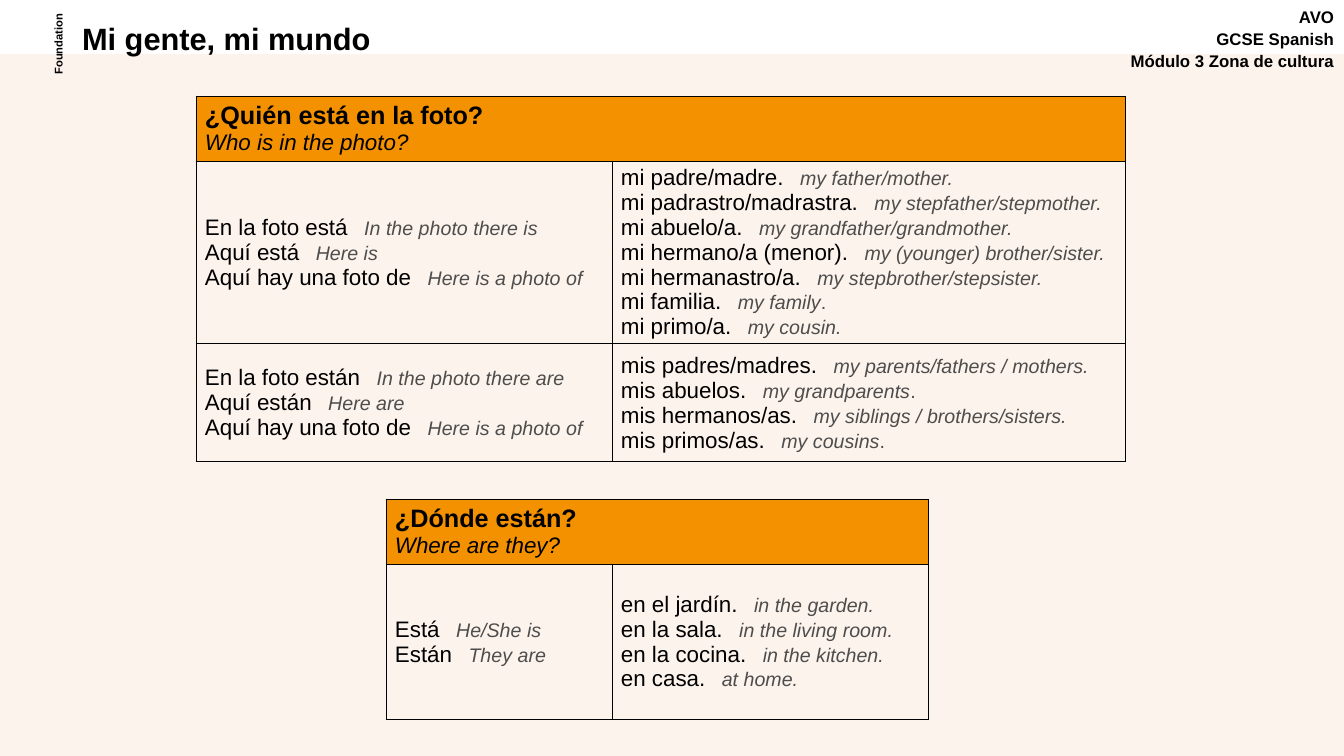
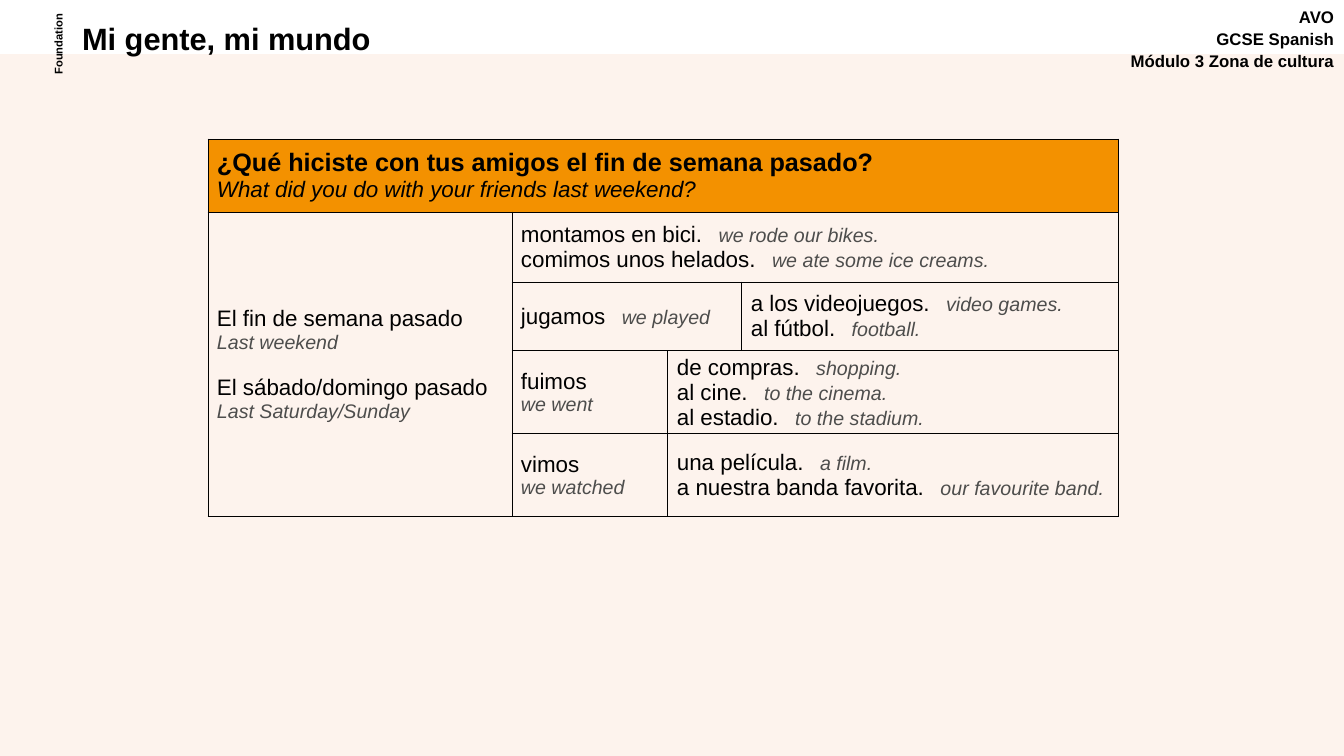
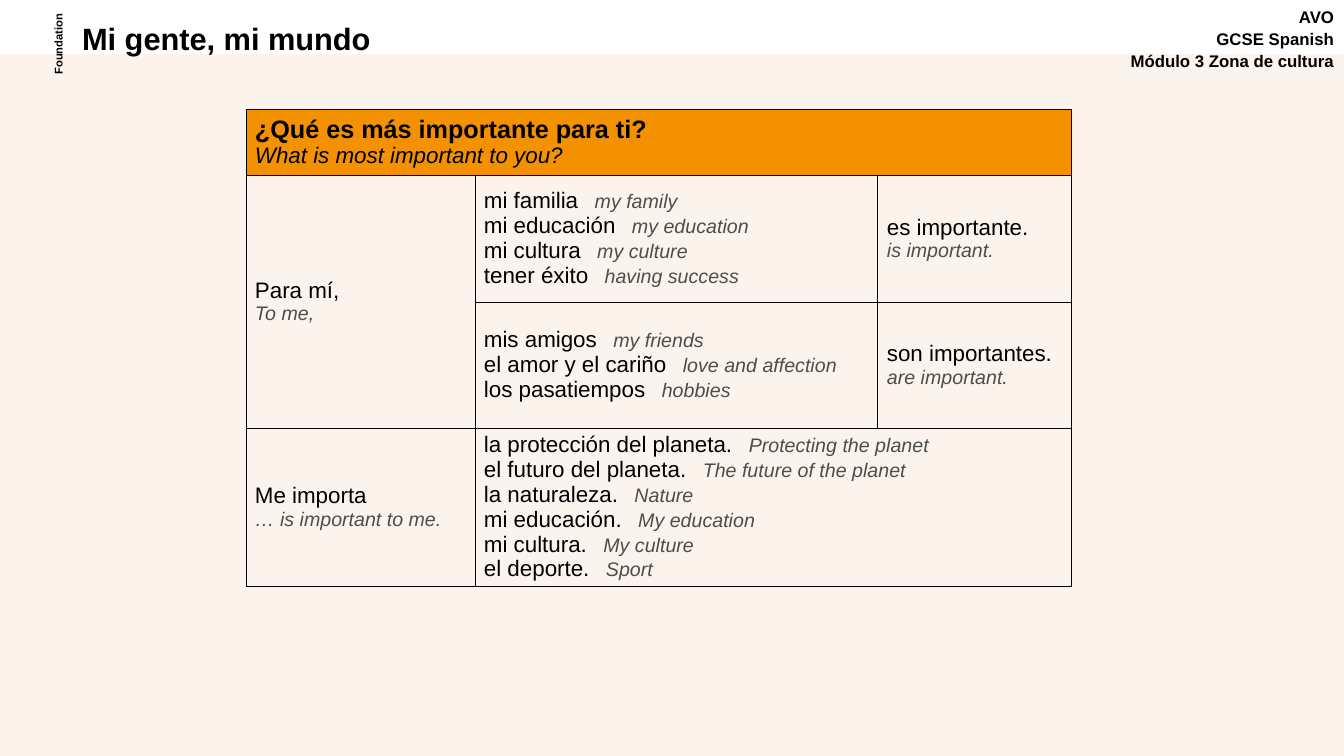
"""Build three vocabulary slides of Spanish sentence tables with English glosses."""
from pptx import Presentation
from pptx.dml.color import RGBColor
from pptx.enum.shapes import MSO_SHAPE
from pptx.enum.text import MSO_ANCHOR as ANCHOR, MSO_AUTO_SIZE as AUTO, PP_ALIGN as ALIGN
from pptx.oxml.ns import qn
from pptx.util import Emu, Pt
from lxml.etree import SubElement

SLIDE_W, SLIDE_H = 1344, 756
EMU_PER_PX = 6858000 / SLIDE_H
FONT = "Arial"
BLACK = RGBColor(0x00, 0x00, 0x00)
GREY = RGBColor(0x4D, 0x4D, 0x4C)
CREAM = RGBColor(0xFD, 0xF3, 0xED)
ORANGE = RGBColor(0xF3, 0x91, 0x00)
TITLE = "Mi gente, mi mundo"
COURSE = ["AVO", "GCSE Spanish", "Módulo 3 Zona de cultura"]


def px(*lengths):
    """Turn pixel lengths into EMU."""
    return [Emu(round(length * EMU_PER_PX)) for length in lengths]


def add_run(paragraph, text, size, color=BLACK, bold=False, italic=False):
    """Add one formatted run and return it."""
    run = paragraph.add_run()
    run.text = text
    font = run.font
    font.name, font.size, font.bold, font.italic = FONT, Pt(size), bold, italic
    font.color.rgb = color
    return run


def next_paragraph(frame):
    """Return the unused first paragraph of a frame, or a new one."""
    first = frame.paragraphs[0]
    return frame.add_paragraph() if first.runs else first


def add_label(slide, box, lines, size, align, gap=0):
    """Add a bold text box with one paragraph per line."""
    label = slide.shapes.add_textbox(*px(*box))
    frame = label.text_frame
    frame.word_wrap = True
    for number, line in enumerate(lines):
        paragraph = next_paragraph(frame)
        paragraph.alignment = align
        if number:
            paragraph.space_before = Pt(gap)
        add_run(paragraph, line, size, bold=True)
    return label


def furnish_layout(slide):
    """Place the band and the two labels on the layout that all slides share."""
    band = slide.shapes.add_shape(MSO_SHAPE.RECTANGLE, *px(0, 54, SLIDE_W, SLIDE_H - 54))
    band.shadow.inherit = False
    band.fill.solid()
    band.fill.fore_color.rgb = CREAM
    band.line.fill.background()
    course = add_label(slide, (1119, 2, 225, 78), COURSE, 12, ALIGN.RIGHT, 1.2)
    tier = add_label(slide, (16, 31, 87, 26), ["Foundation"], 8, ALIGN.CENTER)
    tier.rotation = 270
    layout_tree = slide.slide_layout.shapes._spTree
    for part in (band, course, tier):
        layout_tree.append(part._element)


def add_titled_slide(deck):
    """Add a slide with the shared title."""
    slide = deck.slides.add_slide(deck.slide_layouts[5])
    title = slide.shapes.title
    title.left, title.top, title.width, title.height = px(72, 19, 693, 43)
    frame = title.text_frame
    frame.auto_size = AUTO.NONE
    frame.vertical_anchor = ANCHOR.TOP
    paragraph = frame.paragraphs[0]
    paragraph.alignment = ALIGN.LEFT
    paragraph.line_spacing = 0.9
    add_run(paragraph, TITLE, 22, bold=True)
    return slide


def format_cell(cell):
    """Give a cell thin black borders, no fill and centred text."""
    properties = cell._tc.get_or_add_tcPr()
    for side in ("lnL", "lnR", "lnT", "lnB"):
        edge = SubElement(properties, qn(f"a:{side}"), w=str(Pt(0.75)))
        paint = SubElement(edge, qn("a:solidFill"))
        SubElement(paint, qn("a:srgbClr"), val=str(BLACK))
    cell.fill.background()
    cell.vertical_anchor = ANCHOR.MIDDLE
    cell.margin_left, cell.margin_right, cell.margin_top, cell.margin_bottom = px(9, 9, 4, 4)


def write_question(cell, spanish, english):
    """Fill the orange heading cell."""
    cell.fill.solid()
    cell.fill.fore_color.rgb = ORANGE
    add_run(next_paragraph(cell.text_frame), spanish, 18, bold=True)
    add_run(next_paragraph(cell.text_frame), english, 16, italic=True)


def beside(*phrases):
    """Return a writer that sets each gloss, and any upright stop, beside its phrase."""
    def write(cell):
        for spanish, english, *stop in phrases:
            paragraph = next_paragraph(cell.text_frame)
            add_run(paragraph, spanish, 16)
            gap = add_run(paragraph, " ", 14)
            gap.font._element.set("spc", "780")
            add_run(paragraph, english, 14, GREY, italic=True)
            for mark in stop:
                add_run(paragraph, mark, 14, GREY)
    return write


def below(*phrases):
    """Return a writer that sets each gloss below its phrase."""
    def write(cell):
        for number, (spanish, english) in enumerate(phrases):
            paragraph = next_paragraph(cell.text_frame)
            if number:
                paragraph.space_before = Pt(15.6)
            add_run(paragraph, spanish, 16)
            add_run(next_paragraph(cell.text_frame), english, 14, GREY, italic=True)
    return write


def add_phrase_table(slide, corner, columns, rows, question, cells):
    """Add a table; cells are (row, column, rows spanned, columns spanned, writer)."""
    box = px(*corner, sum(columns), sum(rows))
    table = slide.shapes.add_table(len(rows), len(columns), *box).table
    table.first_row = table.horz_banding = False
    for column, width in zip(table.columns, px(*columns)):
        column.width = width
    for row, height in zip(table.rows, px(*rows)):
        row.height = height
    for cell in table.iter_cells():
        format_cell(cell)
    heading = table.cell(0, 0)
    heading.merge(table.cell(0, len(columns) - 1))
    write_question(heading, *question)
    for row, column, height, width, write in cells:
        cell = table.cell(row, column)
        if height * width > 1:
            cell.merge(table.cell(row + height - 1, column + width - 1))
        write(cell)


def fill_family_slide(slide):
    """Add the tables on who is in the photo and where."""
    add_phrase_table(
        slide, (196, 96), [416, 514], [65, 183, 118],
        ("¿Quién está en la foto?", "Who is in the photo?"), [
            (1, 0, 1, 1, beside(
                ("En la foto está", "In the photo there is"),
                ("Aquí está", "Here is"),
                ("Aquí hay una foto de", "Here is a photo of"))),
            (1, 1, 1, 1, beside(
                ("mi padre/madre.", "my father/mother."),
                ("mi padrastro/madrastra.", "my stepfather/stepmother."),
                ("mi abuelo/a.", "my grandfather/grandmother."),
                ("mi hermano/a (menor).", "my (younger) brother/sister."),
                ("mi hermanastro/a.", "my stepbrother/stepsister."),
                ("mi familia.", "my family", "."),
                ("mi primo/a.", "my cousin."))),
            (2, 0, 1, 1, beside(
                ("En la foto están", "In the photo there are"),
                ("Aquí están", "Here are"),
                ("Aquí hay una foto de", "Here is a photo of"))),
            (2, 1, 1, 1, beside(
                ("mis padres/madres.", "my parents/fathers / mothers."),
                ("mis abuelos.", "my grandparents", "."),
                ("mis hermanos/as.", "my siblings / brothers/sisters."),
                ("mis primos/as.", "my cousins", "."))),
        ])
    add_phrase_table(
        slide, (386, 499), [226, 317], [65, 156],
        ("¿Dónde están?", "Where are they?"), [
            (1, 0, 1, 1, beside(("Está", "He/She is"), ("Están", "They are"))),
            (1, 1, 1, 1, beside(
                ("en el jardín.", "in the garden."),
                ("en la sala.", "in the living room."),
                ("en la cocina.", "in the kitchen."),
                ("en casa.", "at home."))),
        ])


def fill_weekend_slide(slide):
    """Add the table on last weekend."""
    add_phrase_table(
        slide, (208, 139), [304, 156, 74, 377], [73, 70, 69, 83, 83],
        ("¿Qué hiciste con tus amigos el fin de semana pasado?",
         "What did you do with your friends last weekend?"), [
            (1, 0, 4, 1, below(
                ("El fin de semana pasado", "Last weekend"),
                ("El sábado/domingo pasado", "Last Saturday/Sunday"))),
            (1, 1, 1, 3, beside(
                ("montamos en bici.", "we rode our bikes."),
                ("comimos unos helados.", "we ate some ice creams."))),
            (2, 1, 1, 2, beside(("jugamos", "we played"))),
            (2, 3, 1, 1, beside(
                ("a los videojuegos.", "video games."),
                ("al fútbol.", "football."))),
            (3, 1, 1, 1, below(("fuimos", "we went"))),
            (3, 2, 1, 2, beside(
                ("de compras.", "shopping."),
                ("al cine.", "to the cinema."),
                ("al estadio.", "to the stadium."))),
            (4, 1, 1, 1, below(("vimos", "we watched"))),
            (4, 2, 1, 2, beside(
                ("una película.", "a film."),
                ("a nuestra banda favorita.", "our favourite band."))),
        ])


def fill_values_slide(slide):
    """Add the table on what is most important."""
    add_phrase_table(
        slide, (246, 109), [229, 403, 194], [66, 127, 126, 158],
        ("¿Qué es más importante para ti?", "What is most important to you?"), [
            (1, 0, 2, 1, below(("Para mí,", "To me,"))),
            (1, 1, 1, 1, beside(
                ("mi familia", "my family"),
                ("mi educación", "my education"),
                ("mi cultura", "my culture"),
                ("tener éxito", "having success"))),
            (1, 2, 1, 1, below(("es importante.", "is important."))),
            (2, 1, 1, 1, beside(
                ("mis amigos", "my friends"),
                ("el amor y el cariño", "love and affection"),
                ("los pasatiempos", "hobbies"))),
            (2, 2, 1, 1, below(("son importantes.", "are important."))),
            (3, 0, 1, 1, below(("Me importa", "… is important to me."))),
            (3, 1, 1, 2, beside(
                ("la protección del planeta.", "Protecting the planet"),
                ("el futuro del planeta.", "The future of the planet"),
                ("la naturaleza.", "Nature"),
                ("mi educación.", "My education"),
                ("mi cultura.", "My culture"),
                ("el deporte.", "Sport"))),
        ])


def main():
    """Build and save the deck."""
    deck = Presentation()
    deck.slide_width, deck.slide_height = px(SLIDE_W, SLIDE_H)
    family, weekend, values = [add_titled_slide(deck) for _ in range(3)]
    furnish_layout(family)
    fill_family_slide(family)
    fill_weekend_slide(weekend)
    fill_values_slide(values)
    deck.save("out.pptx")


if __name__ == "__main__":
    main()
